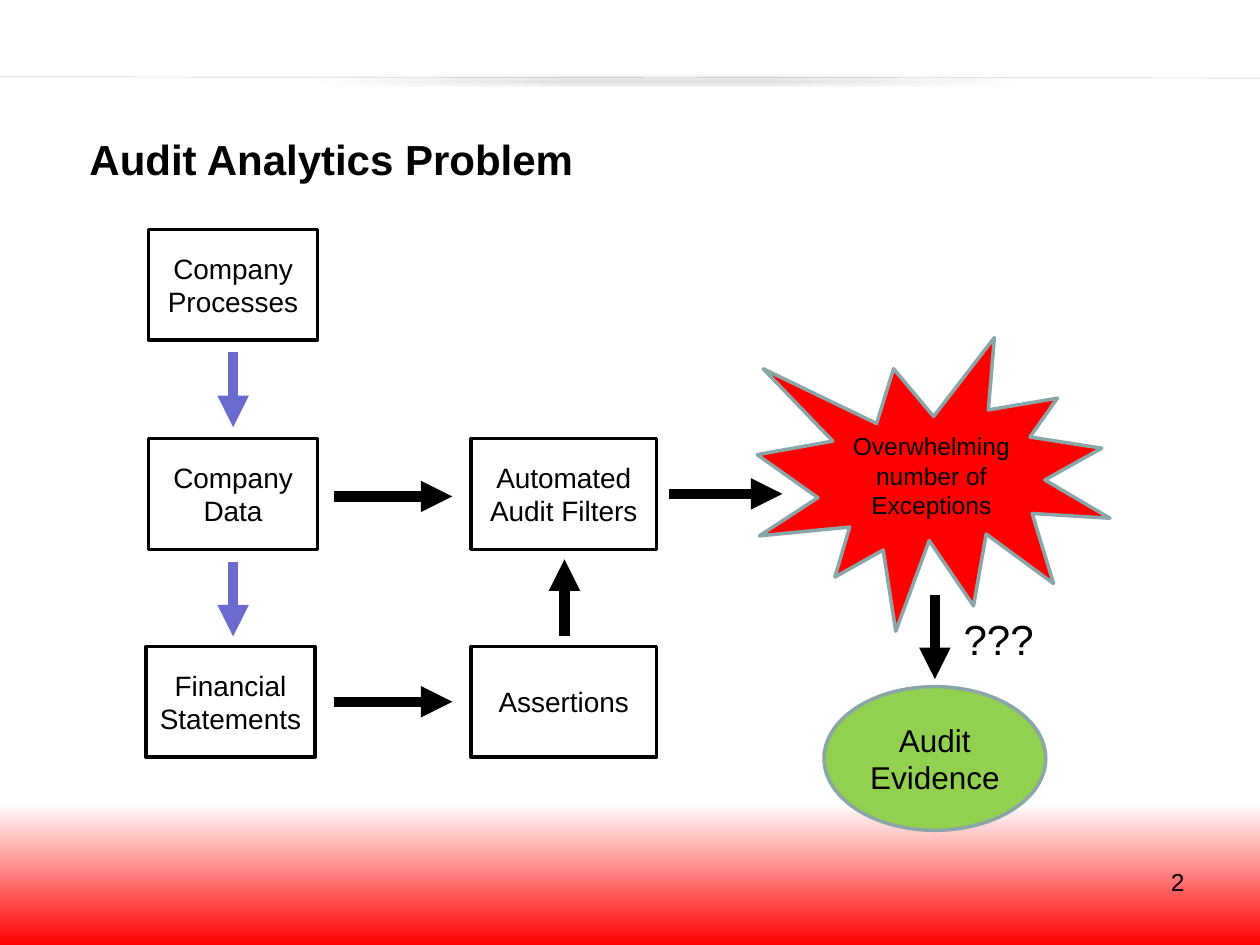
from copy import deepcopy
from lxml import etree
from pptx import Presentation
from pptx.dml.color import RGBColor
from pptx.enum.shapes import MSO_CONNECTOR, MSO_SHAPE
from pptx.enum.text import MSO_ANCHOR, MSO_AUTO_SIZE, PP_ALIGN
from pptx.oxml.ns import qn
from pptx.util import Inches, Pt

COLORS = {
    "black": "000000", "white": "FFFFFF", "red": "FF0000", "green": "92D050",
    "violet": "6B6BCF", "outline": "8AA6A8", "rule": "BFBFBF",
}


def write(shape, text, size, align, bold=False):
    frame = shape.text_frame
    frame.text = text
    frame.word_wrap = True
    paragraph = frame.paragraphs[0]
    paragraph.alignment = align
    font = paragraph.runs[0].font
    font.name, font.size, font.bold = "Arial", Pt(size), bold
    font.color.rgb = RGBColor.from_string(COLORS["black"])


def connect(x1, y1, x2, y2, color, width):
    line = slide.shapes.add_connector(
        MSO_CONNECTOR.STRAIGHT, Inches(x1), Inches(y1), Inches(x2), Inches(y2))
    line.line.color.rgb = RGBColor.from_string(COLORS[color])
    line.line.width = Pt(width)
    effects = etree.SubElement(line._element.spPr, qn("a:effectLst"))
    return line, effects


prs = Presentation()
prs.slide_width, prs.slide_height = Inches(10), Inches(7.5)
slide = prs.slides.add_slide(prs.slide_layouts[5])

backdrop = slide.background.fill
backdrop.gradient()
backdrop.gradient_angle = 90
stop_list = slide._element.find(".//" + qn("a:gsLst"))
stop_list.insert(1, deepcopy(stop_list[0]))
for stop, (position, color) in zip(
        backdrop.gradient_stops, [(0, "red"), (0.15, "white"), (1, "white")]):
    stop.position = position
    stop.color.rgb = RGBColor.from_string(COLORS[color])

header_rule, rule_effects = connect(0, 0.61, 10, 0.62, "rule", 0.25)
rule_shadow = etree.SubElement(
    rule_effects, qn("a:outerShdw"), blurRad=str(Pt(3.1)), dist=str(Pt(1.6)),
    dir="5400000", algn="t", rotWithShape="0")
shadow_color = etree.SubElement(rule_shadow, qn("a:srgbClr"), val=COLORS["black"])
etree.SubElement(shadow_color, qn("a:alpha"), val="38000")

title = slide.shapes.title
title.left, title.top = Inches(0.61), Inches(0.82)
title.width, title.height = Inches(4.48), Inches(0.88)
write(title, "Audit Analytics Problem", 24, PP_ALIGN.LEFT, bold=True)
title.text_frame.vertical_anchor = MSO_ANCHOR.MIDDLE
title.text_frame.auto_size = MSO_AUTO_SIZE.NONE

RECT, OVAL, BURST = MSO_SHAPE.RECTANGLE, MSO_SHAPE.OVAL, MSO_SHAPE.EXPLOSION1
steps = [
    ("Company Processes", RECT, 1.18, 1.82, 1.34, 0.88, None, "black", 16),
    ("Company Data", RECT, 1.18, 3.48, 1.34, 0.88, None, "black", 16),
    ("Financial Statements", RECT, 1.16, 5.13, 1.34, 0.88, None, "black", 16),
    ("Automated Audit Filters", RECT, 3.74, 3.48, 1.47, 0.88, None, "black", 16),
    ("Assertions", RECT, 3.74, 5.13, 1.47, 0.88, None, "black", 16),
    ("Audit Evidence", OVAL, 6.54, 5.45, 1.76, 1.14, "green", "outline", 18),
    ("Overwhelming number of Exceptions", BURST, 6.01, 2.68, 2.8, 2.33,
     "red", "outline", 14),
]
for text, kind, left, top, width, height, fill, outline, size in steps:
    step = slide.shapes.add_shape(
        kind, Inches(left), Inches(top), Inches(width), Inches(height))
    step.shadow.inherit = False
    if fill:
        step.fill.solid()
        step.fill.fore_color.rgb = RGBColor.from_string(COLORS[fill])
    else:
        step.fill.background()
    step.line.color.rgb = RGBColor.from_string(COLORS[outline])
    step.line.width = Pt(2)
    write(step, text, size, PP_ALIGN.CENTER)
    step.text_frame.vertical_anchor = MSO_ANCHOR.MIDDLE

flows = [
    (1.85, 2.79, 1.85, 3.39, "violet"),
    (1.85, 4.46, 1.85, 5.05, "violet"),
    (2.65, 3.94, 3.59, 3.94, "black"),
    (2.65, 5.57, 3.59, 5.57, "black"),
    (4.48, 5.05, 4.48, 4.44, "black"),
    (5.31, 3.92, 6.21, 3.92, "black"),
    (7.42, 4.72, 7.42, 5.39, "black"),
]
for x1, y1, x2, y2, color in flows:
    flow, _ = connect(x1, y1, x2, y2, color, 6)
    etree.SubElement(flow.line._get_or_add_ln(), qn("a:tailEnd"), type="triangle")

captions = [
    ("???", 7.55, 4.82, 0.87, 0.5, 24, PP_ALIGN.LEFT),
    ("2", 7.17, 6.83, 2.33, 0.52, 14, PP_ALIGN.RIGHT),
]
for text, left, top, width, height, size, align in captions:
    caption = slide.shapes.add_textbox(
        Inches(left), Inches(top), Inches(width), Inches(height))
    write(caption, text, size, align)

prs.save("out.pptx")
